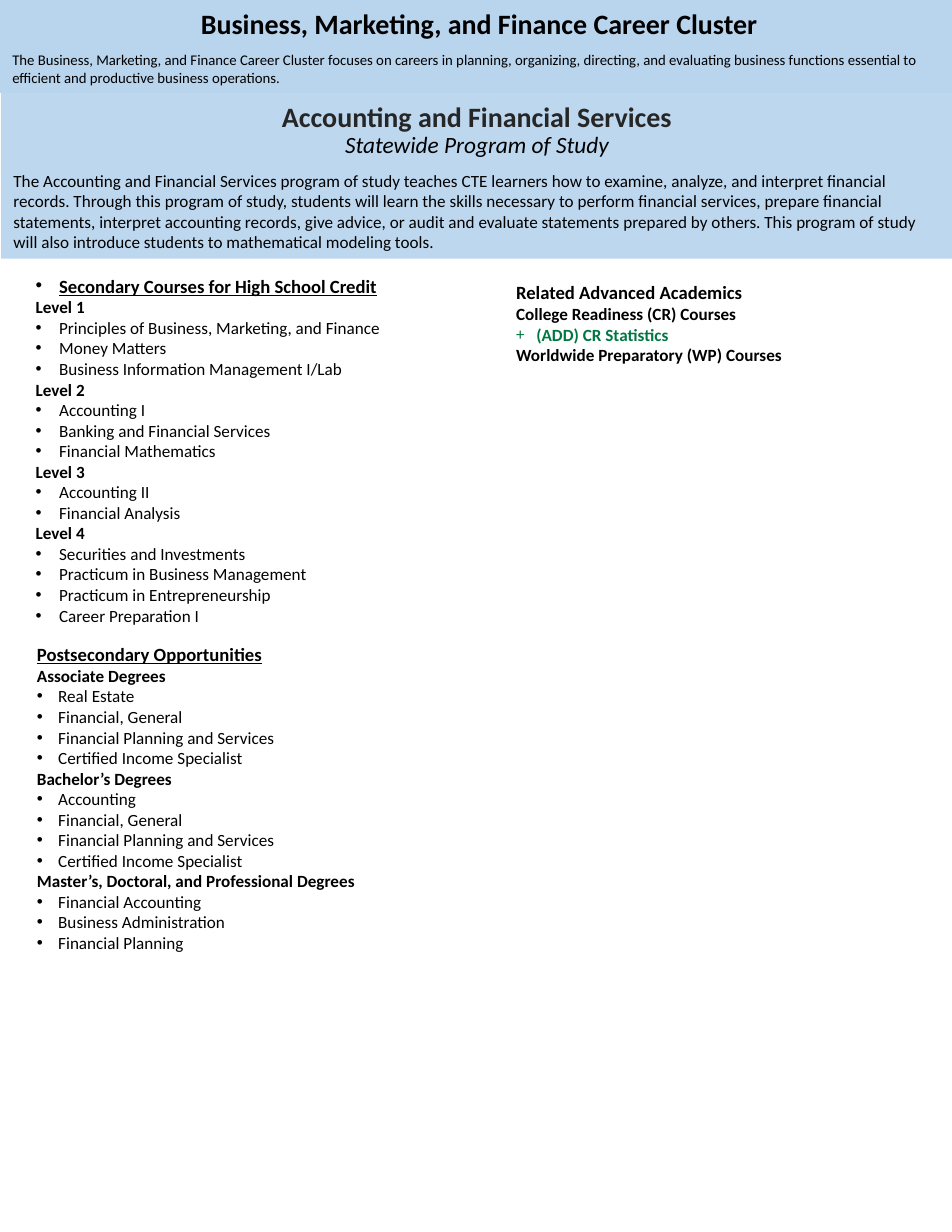
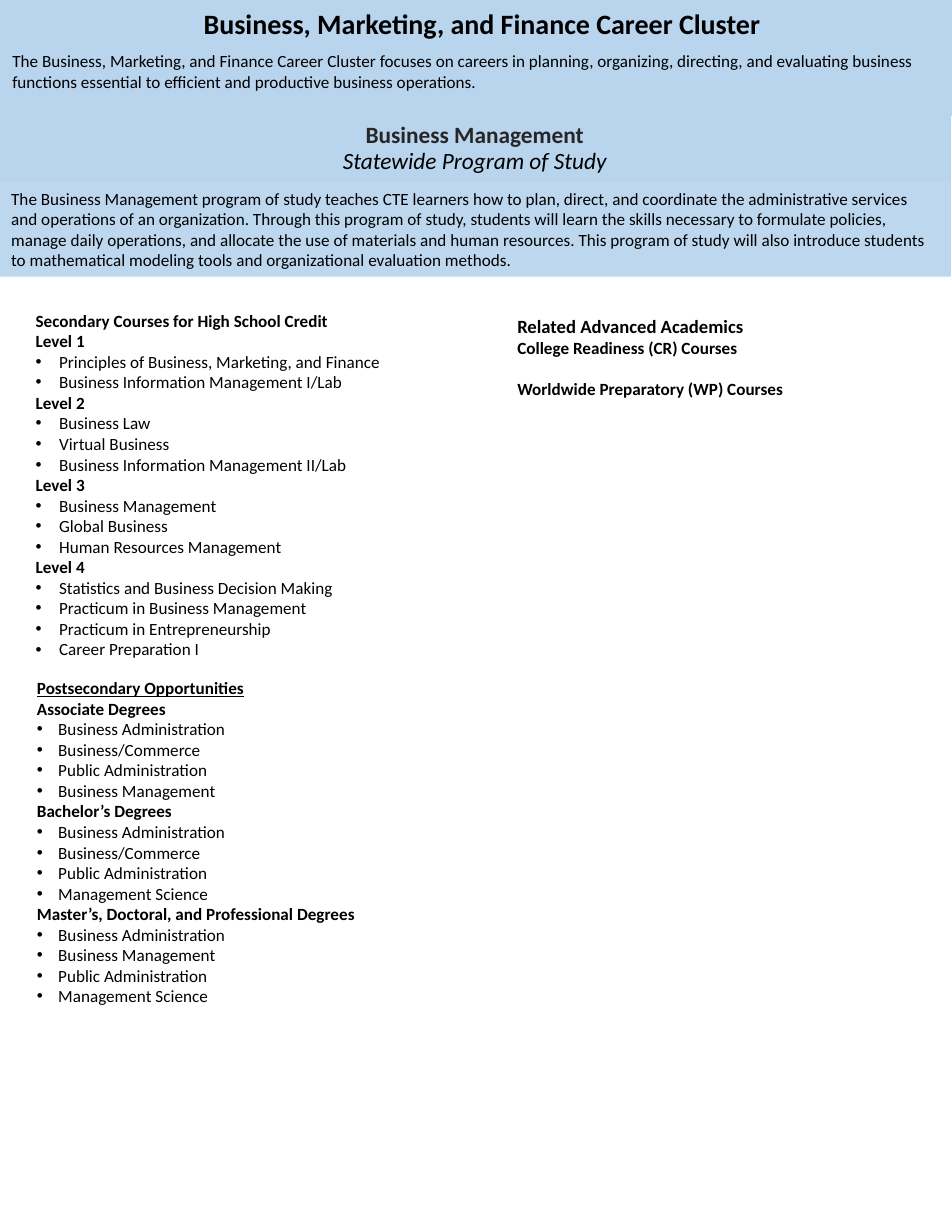
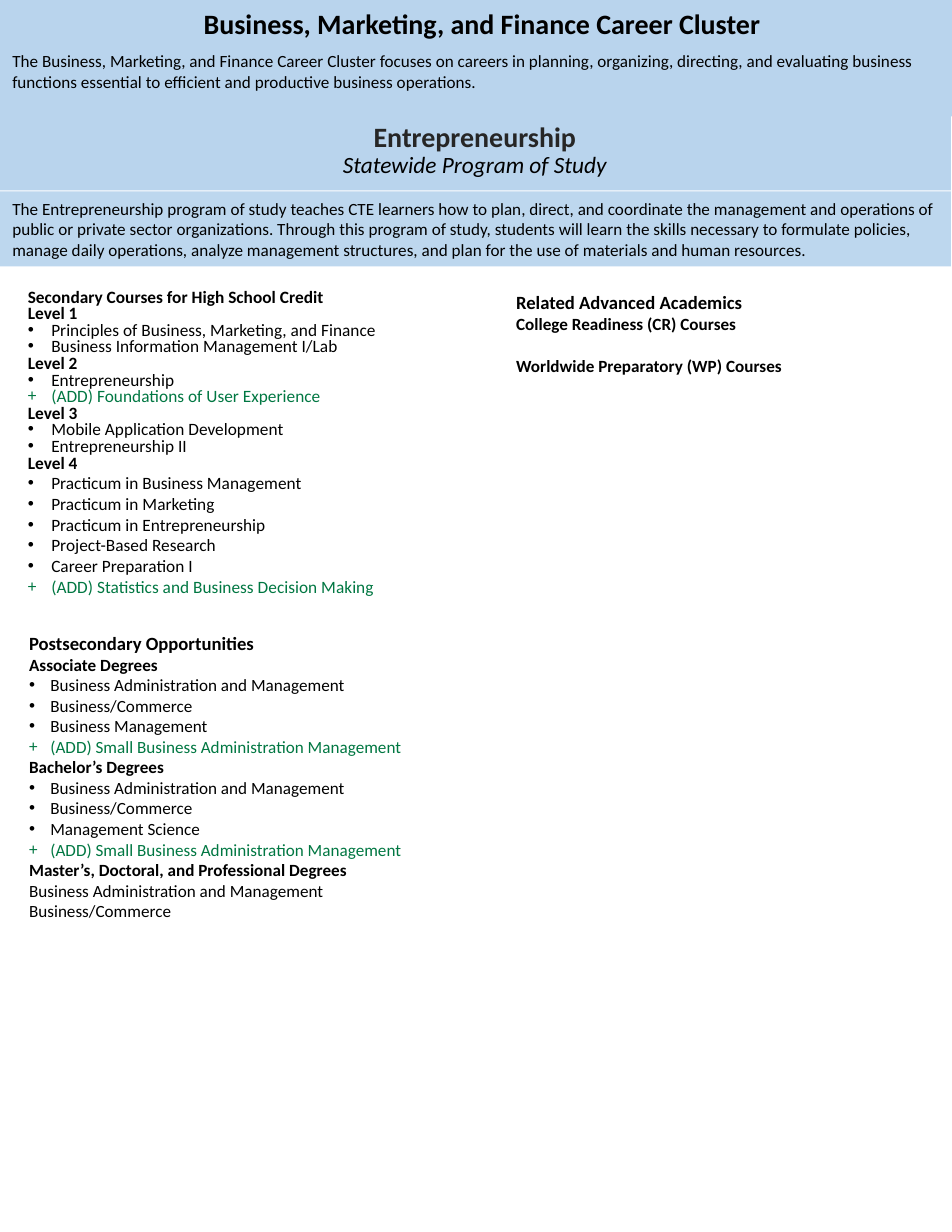
from pptx import Presentation
from pptx.dml.color import RGBColor
from pptx.enum.shapes import MSO_SHAPE
from pptx.enum.text import MSO_ANCHOR, MSO_AUTO_SIZE, PP_ALIGN
from pptx.oxml.ns import qn
from pptx.util import Inches, Pt
from lxml.etree import SubElement

# Shared look; the page is a grid of 85 columns by 110 rows
WIDTH, HEIGHT = Inches(8.5), Inches(11)
COLUMN, ROW = WIDTH / 85, HEIGHT / 110
FONT = "Calibri"
COLORS = {"cluster": "B9D4ED", "program": "BDD7EE", "title": "262626",
          "text": "000000", "added": "007742"}
CLUSTER = "Business, Marketing, and Finance Career Cluster"
CLUSTER_TEXT = (
    "The Business, Marketing, and Finance Career Cluster focuses on careers in planning, "
    "organizing, directing, and evaluating business functions essential to efficient and "
    "productive business operations.")
SUBTITLE = "Statewide Program of Study"
EMPTY_LINE = 13.4  # points, one line of 11 point text
BOX_INSETS = (1.1, 0.6)
BODY_INSETS = (1, 0.5)

# Lists: "# " marks a heading, "- " a bulleted item, "+ " an added item
ACCOUNTING = {
    "title": "Accounting and Financial Services",
    "title_size": 18, "title_at": (0.1, 8.2), "title_fill": "program",
    "cluster_rows": 8.3, "cluster_size": 9.5, "cluster_indent": 0.6,
    "summary_at": (0.1, 14.6, 84.9, 8.5),
    "summary": (
        "The Accounting and Financial Services program of study teaches CTE learners how to "
        "examine, analyze, and interpret financial records. Through this program of study, "
        "students will learn the skills necessary to perform financial services, prepare "
        "financial statements, interpret accounting records, give advice, or audit and evaluate "
        "statements prepared by others. This program of study will also introduce students to "
        "mathematical modeling tools."),
    "courses_at": (2.2, 24.6, 41, 32.1),
    "courses_style": {"head_size": 12, "underline": True, "head_bullet": True,
                      "tight_lines": 1, "tight": 0.7},
    "courses": """# Secondary Courses for High School Credit
# Level 1
- Principles of Business, Marketing, and Finance
- Money Matters
- Business Information Management I/Lab
# Level 2
- Accounting I
- Banking and Financial Services
- Financial Mathematics
# Level 3
- Accounting II
- Financial Analysis
# Level 4
- Securities and Investments
- Practicum in Business Management
- Practicum in Entrepreneurship
- Career Preparation I""",
    "academics_at": (45.1, 24.6, 39.8, 15.2),
    "academics_added": "+ (ADD) CR Statistics",
    "degrees_at": (2.2, 56.8, 39, 30.9),
    "degrees_style": {"head_size": 12, "underline": True},
    "degrees": """# Postsecondary Opportunities
# Associate Degrees
- Real Estate
- Financial, General
- Financial Planning and Services
- Certified Income Specialist
# Bachelor’s Degrees
- Accounting
- Financial, General
- Financial Planning and Services
- Certified Income Specialist
# Master’s, Doctoral, and Professional Degrees
- Financial Accounting
- Business Administration
- Financial Planning""",
}

MANAGEMENT = {
    "title": "Business Management",
    "title_size": 15, "title_at": (-0.1, 9.8), "title_fill": "cluster",
    "cluster_rows": 10.4, "cluster_size": 11, "cluster_indent": 1.1,
    "summary_at": (-0.1, 16.2, 85, 8.5),
    "summary": (
        "The Business Management program of study teaches CTE learners how to plan, direct, and "
        "coordinate the administrative services and operations of an organization. Through this "
        "program of study, students will learn the skills necessary to formulate policies, "
        "manage daily operations, and allocate the use of materials and human resources. This "
        "program of study will also introduce students to mathematical modeling tools and "
        "organizational evaluation methods."),
    "courses_at": (2.2, 27.2, 41, 32.7),
    "courses_style": {},
    "courses": """# Secondary Courses for High School Credit
# Level 1
- Principles of Business, Marketing, and Finance
- Business Information Management I/Lab
# Level 2
- Business Law
- Virtual Business
- Business Information Management II/Lab
# Level 3
- Business Management
- Global Business
- Human Resources Management
# Level 4
- Statistics and Business Decision Making
- Practicum in Business Management
- Practicum in Entrepreneurship
- Career Preparation I""",
    "academics_at": (45.2, 27.6, 39.8, 15.2),
    "academics_added": None,
    "degrees_at": (2.2, 59.9, 39, 32.6),
    "degrees_style": {"underline": True},
    "degrees": """# Postsecondary Opportunities
# Associate Degrees
- Business Administration
- Business/Commerce
- Public Administration
- Business Management
# Bachelor’s Degrees
- Business Administration
- Business/Commerce
- Public Administration
- Management Science
# Master’s, Doctoral, and Professional Degrees
- Business Administration
- Business Management
- Public Administration
- Management Science""",
}

ENTREPRENEURSHIP = {
    "title": "Entrepreneurship",
    "title_size": 18, "title_at": (-0.1, 10), "title_fill": "cluster",
    "cluster_rows": 10.4, "cluster_size": 11, "cluster_indent": 1.1,
    "summary_at": (0, 17.1, 84.9, 6.7),
    "summary": (
        "The Entrepreneurship program of study teaches CTE learners how to plan, direct, and "
        "coordinate the management and operations of public or private sector organizations. "
        "Through this program of study, students will learn the skills necessary to formulate "
        "policies, manage daily operations, analyze management structures, and plan for the use "
        "of materials and human resources."),
    "courses_at": (1.5, 25.4, 41, 30.4),
    "courses_style": {"head_size": 11.1, "size": 11.1, "tight_lines": 11, "tight": 0.8},
    "courses": """# Secondary Courses for High School Credit
# Level 1
- Principles of Business, Marketing, and Finance
- Business Information Management I/Lab
# Level 2
- Entrepreneurship
+ (ADD) Foundations of User Experience
# Level 3
- Mobile Application Development
- Entrepreneurship II
# Level 4
- Practicum in Business Management
- Practicum in Marketing
- Practicum in Entrepreneurship
- Project-Based Research
- Career Preparation I
+ (ADD) Statistics and Business Decision Making""",
    "academics_at": (45.1, 25.5, 39.8, 22.5),
    "academics_added": None,
    "degrees_at": (1.5, 55.8, 39, 29),
    "degrees_style": {"head_size": 12},
    "degrees": """# Postsecondary Opportunities
# Associate Degrees
- Business Administration and Management
- Business/Commerce
- Business Management
+ (ADD) Small Business Administration Management
# Bachelor’s Degrees
- Business Administration and Management
- Business/Commerce
- Management Science
+ (ADD) Small Business Administration Management
# Master’s, Doctoral, and Professional Degrees
Business Administration and Management
Business/Commerce""",
}


def place(columns, rows, wide, high):
    return int(columns * COLUMN), int(rows * ROW), int(wide * COLUMN), int(high * ROW)


def prepare_frame(box, insets, anchor=MSO_ANCHOR.TOP, grow=False):
    frame = box.text_frame
    frame.word_wrap = True
    frame.vertical_anchor = anchor
    frame.auto_size = MSO_AUTO_SIZE.SHAPE_TO_FIT_TEXT if grow else MSO_AUTO_SIZE.NONE
    frame.margin_left = frame.margin_right = int(insets[0] * COLUMN)
    frame.margin_top = frame.margin_bottom = int(insets[1] * ROW)
    return frame


def add_band(page, at, fill, insets, **options):
    band = page.shapes.add_shape(MSO_SHAPE.RECTANGLE, *place(*at))
    band.shadow.inherit = False
    band.fill.solid()
    band.fill.fore_color.rgb = RGBColor.from_string(COLORS[fill])
    band.line.fill.background()
    return prepare_frame(band, insets, **options)


def write(para, text, size, color="text", bold=False, italic=False, underline=False,
          align=PP_ALIGN.LEFT, spacing=None):
    para.text = text
    para.alignment = align
    if spacing:
        para.line_spacing = spacing
    for span in para.runs:
        font = span.font
        font.name, font.size = FONT, Pt(size)
        font.bold, font.italic, font.underline = bold, italic, underline
        font.color.rgb = RGBColor.from_string(COLORS[color])


def indent(para, columns, sign=None, sign_font="Arial"):
    """Indent a paragraph, hanging it behind a bullet sign if one is given."""
    settings = para._p.get_or_add_pPr()
    settings.set("marL", str(int(columns * COLUMN)))
    if sign:
        settings.set("indent", str(-int(columns * COLUMN)))
        SubElement(settings, qn("a:buFont")).set("typeface", sign_font)
        SubElement(settings, qn("a:buChar")).set("char", sign)


def write_list(frame, lines, hang, head_size=11, size=11, underline=False,
               head_bullet=False, tight_lines=0, tight=None, bold_added=False):
    for number, line in enumerate(lines):
        para = frame.paragraphs[0] if number == 0 else frame.add_paragraph()
        mark, text = line[:2], line
        if mark in ("# ", "- ", "+ "):
            text = line[2:]
        first, added = number == 0, mark == "+ "
        write(para, text, head_size if first else size,
              color="added" if added else "text",
              bold=mark == "# " or added and bold_added,
              underline=underline and first,
              spacing=tight if number < tight_lines else None)
        if added:
            indent(para, hang, "+", FONT)
        elif mark == "- " or first and head_bullet:
            indent(para, hang, "•")


def add_text_box(page, at, insets, grow=False):
    return prepare_frame(page.shapes.add_textbox(*place(*at)), insets, grow=grow)


def add_program_title(page, program):
    frame = add_band(page, (*program["title_at"], 85, 7), program["title_fill"],
                     BODY_INSETS, anchor=MSO_ANCHOR.MIDDLE)
    centred = {"align": PP_ALIGN.CENTER, "spacing": 0.9}
    write(frame.paragraphs[0], program["title"], program["title_size"], "title",
          bold=True, **centred)
    write(frame.add_paragraph(), SUBTITLE, 15, italic=True, **centred)


def add_cluster_band(page, program):
    frame = add_band(page, (0, 0, 85, program["cluster_rows"]), "cluster", BOX_INSETS, grow=True)
    heading = frame.paragraphs[0]
    write(heading, CLUSTER, 18, bold=True, align=PP_ALIGN.CENTER)
    heading.space_after = Pt(6.6)
    indent(heading, program["cluster_indent"])
    write(frame.add_paragraph(), CLUSTER_TEXT, program["cluster_size"])


def add_academics(page, program):
    added = program["academics_added"]
    lines = ["# Related Advanced Academics", "# College Readiness (CR) Courses",
             *([added] if added else []), "# Worldwide Preparatory (WP) Courses"]
    frame = add_text_box(page, program["academics_at"], BODY_INSETS)
    write_list(frame, lines, 1.8, head_size=12, bold_added=True)
    if not added:
        frame.paragraphs[-1].space_before = Pt(EMPTY_LINE)


def add_program_page(deck, program):
    page = deck.slides.add_slide(deck.slide_layouts[6])
    # Bands across the top
    add_program_title(page, program)
    add_cluster_band(page, program)
    summary = add_band(page, program["summary_at"], "program", BOX_INSETS, grow=True)
    write(summary.paragraphs[0], program["summary"], 11)
    # Course and degree lists
    courses = add_text_box(page, program["courses_at"], BODY_INSETS)
    write_list(courses, program["courses"].splitlines(), 2.1, **program["courses_style"])
    add_academics(page, program)
    degrees = add_text_box(page, program["degrees_at"], BOX_INSETS, grow=True)
    write_list(degrees, program["degrees"].splitlines(), 1.9, **program["degrees_style"])


def main():
    deck = Presentation()
    deck.slide_width, deck.slide_height = WIDTH, HEIGHT
    for program in (ACCOUNTING, MANAGEMENT, ENTREPRENEURSHIP):
        add_program_page(deck, program)
    deck.save("out.pptx")


if __name__ == "__main__":
    main()
